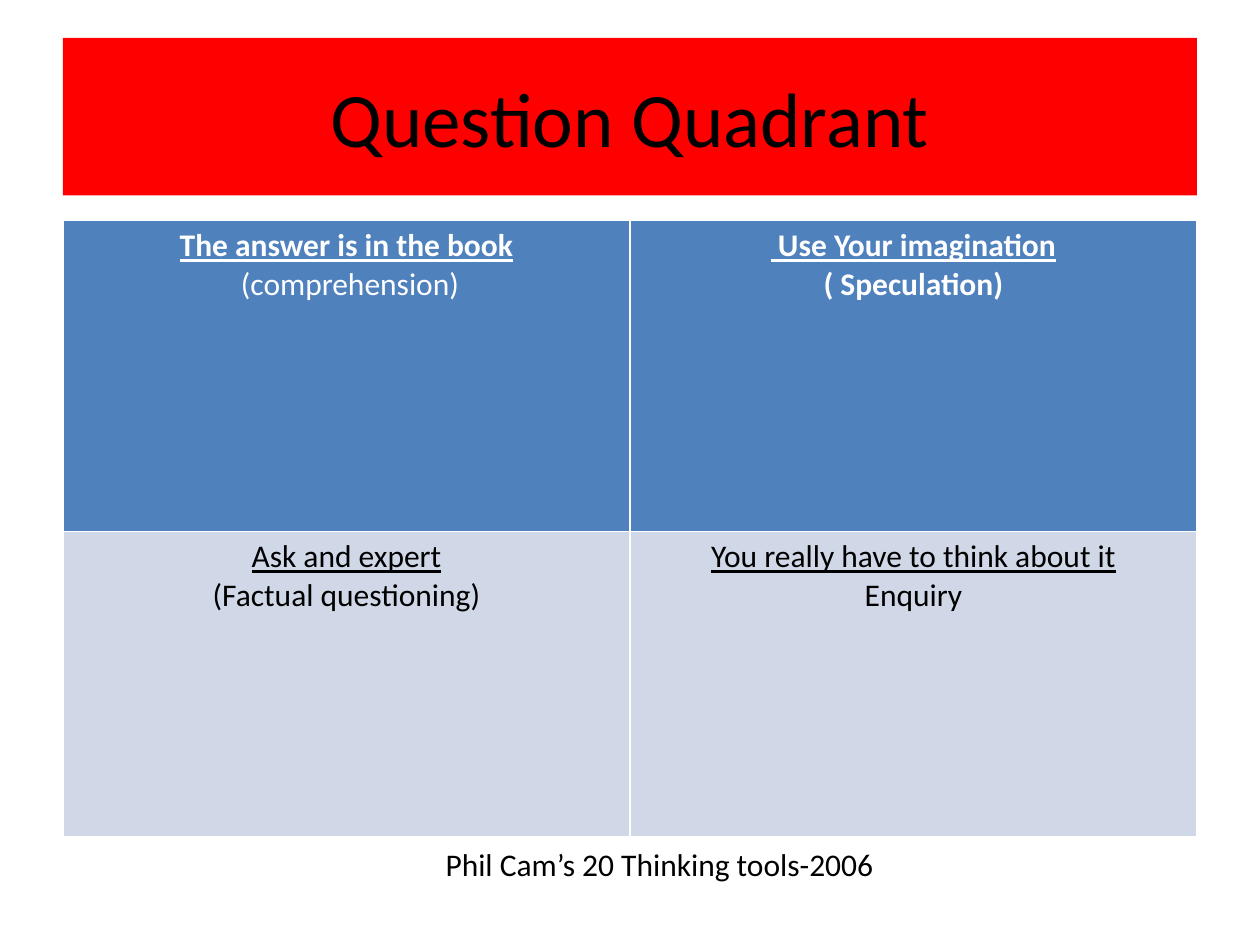
from pptx import Presentation
from pptx.dml.color import RGBColor
from pptx.enum.shapes import MSO_SHAPE
from pptx.enum.text import MSO_ANCHOR, PP_ALIGN
from pptx.util import Inches, Pt

RECTANGLE = MSO_SHAPE.RECTANGLE
MIDDLE = MSO_ANCHOR.MIDDLE
CENTER = PP_ALIGN.CENTER

TITLE = "Question Quadrant"
SOURCE = "Phil Cam’s 20 Thinking tools-2006"
QUADRANTS = [
    [
        [("The answer is in the book", True), (" (comprehension)", False)],
        [(" Use Your imagination", True), ("( Speculation)", True)],
    ],
    [
        [("Ask and expert", False), ("(Factual questioning)", False)],
        [("You really have to think about it", False), ("Enquiry", False)],
    ],
]
ROW_STYLES = [("4F81BD", "FFFFFF", 2.47), ("D0D8E8", "000000", 2.42)]

WIDTH, HEIGHT = 10, 7.5
MARGIN = WIDTH * 0.05
CONTENT_WIDTH = WIDTH - 2 * MARGIN


def color(value):
    return RGBColor.from_string(value)


def write(paragraph, text, size, text_color, bold=False, underline=False):
    paragraph.text = text
    paragraph.alignment = CENTER
    font = paragraph.font
    font.name = "Calibri"
    font.size = Pt(size)
    font.bold = bold
    font.underline = underline
    font.color.rgb = color(text_color)


def add_title(slide):
    banner = slide.shapes.add_shape(
        RECTANGLE, Inches(MARGIN), Inches(0.3), Inches(CONTENT_WIDTH), Inches(1.25)
    )
    banner.shadow.inherit = False
    banner.fill.solid()
    banner.fill.fore_color.rgb = color("FF0000")
    banner.line.fill.background()
    banner.text_frame.vertical_anchor = MIDDLE
    write(banner.text_frame.paragraphs[0], TITLE, 44, "000000")


def add_quadrants(slide):
    table_height = sum(height for _, _, height in ROW_STYLES)
    table = slide.shapes.add_table(
        len(QUADRANTS), len(QUADRANTS[0]), Inches(MARGIN), Inches(1.75),
        Inches(CONTENT_WIDTH), Inches(table_height),
    ).table
    for row_index, (quadrants, style) in enumerate(zip(QUADRANTS, ROW_STYLES)):
        fill_color, text_color, height = style
        table.rows[row_index].height = Inches(height)
        for column_index, lines in enumerate(quadrants):
            cell = table.cell(row_index, column_index)
            cell.fill.solid()
            cell.fill.fore_color.rgb = color(fill_color)
            frame = cell.text_frame
            for line_index, (text, bold) in enumerate(lines):
                paragraph = frame.add_paragraph() if line_index else frame.paragraphs[0]
                write(paragraph, text, 18, text_color, bold, underline=line_index == 0)


def add_source(slide):
    box = slide.shapes.add_textbox(Inches(1.22), Inches(6.66), Inches(8.03), Inches(0.4))
    box.text_frame.word_wrap = True
    write(box.text_frame.paragraphs[0], SOURCE, 18, "000000")


def main():
    presentation = Presentation()
    presentation.slide_width = Inches(WIDTH)
    presentation.slide_height = Inches(HEIGHT)
    slide = presentation.slides.add_slide(presentation.slide_layouts[6])
    add_title(slide)
    add_quadrants(slide)
    add_source(slide)
    presentation.save("out.pptx")


if __name__ == "__main__":
    main()
